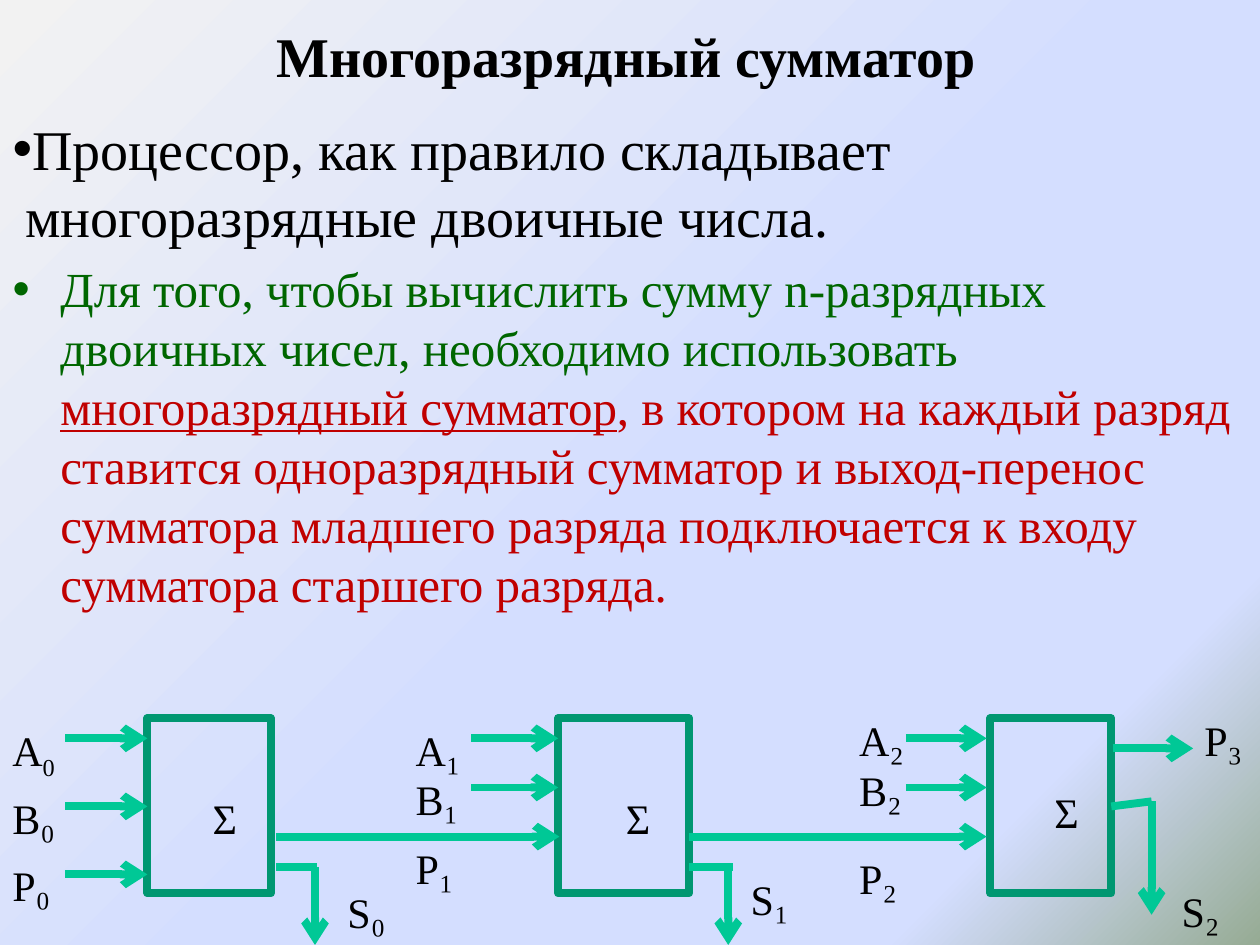
from lxml.etree import SubElement
from pptx import Presentation
from pptx.dml.color import RGBColor
from pptx.enum.shapes import MSO_CONNECTOR, MSO_SHAPE
from pptx.enum.text import MSO_ANCHOR, MSO_AUTO_SIZE, PP_ALIGN
from pptx.oxml.ns import qn
from pptx.util import Inches, Pt

FONT = "Times New Roman"
BLACK, GREEN, RED = "000000", "006600", "C00000"
BOX_LINE, WIRE = "009771", "00C896"
LINE_WIDTH = Pt(4.5)

# Rows shared by the three adders, in inches
BOX_TOP, BOX_HEIGHT = 5.7, 1.39
ROW_A, ROW_B, ROW_CARRY, ROW_SUM = 5.86, 6.25, 6.64, 6.88


def rgb(color):
    return RGBColor.from_string(color)


def set_font(font, size, color=BLACK, bold=False):
    font.name, font.size, font.bold = FONT, Pt(size), bold
    font.color.rgb = rgb(color)


def place(shape, left, top, width, height):
    shape.left, shape.top = Inches(left), Inches(top)
    shape.width, shape.height = Inches(width), Inches(height)


def set_background(slide, stops, angle):
    fill = slide.background.fill
    fill.gradient()
    fill.gradient_angle = 360 - angle  # counted counter-clockwise
    stop_list = slide.background._cSld.find(".//" + qn("a:gsLst"))
    for stop in list(stop_list):
        stop_list.remove(stop)
    for percent, color in stops:
        stop = SubElement(stop_list, qn("a:gs"), pos=str(percent * 1000))
        SubElement(stop, qn("a:srgbClr"), val=color)


def add_title(slide, text):
    title = slide.shapes.title
    place(title, 0.47, 0, 9, 0.87)
    frame = title.text_frame
    frame.auto_size = MSO_AUTO_SIZE.NONE
    frame.vertical_anchor = MSO_ANCHOR.MIDDLE
    frame.text = text
    frame.paragraphs[0].alignment = PP_ALIGN.CENTER
    set_font(frame.paragraphs[0].font, 32, bold=True)


def add_bullet(paragraph, size, indent, runs):
    properties = paragraph._p.get_or_add_pPr()
    properties.set("marL", str(Inches(indent)))
    properties.set("indent", str(-Inches(indent)))
    paragraph.space_before = Pt(size * 0.2)
    for text, color, underline in runs:
        run = paragraph.add_run()
        run.text = text
        set_font(run.font, size, color)
        run.font.underline = underline


def add_body(slide):
    body = slide.placeholders[1]
    place(body, 0, 0.86, 10, 4.14)
    frame = body.text_frame
    frame.auto_size = MSO_AUTO_SIZE.NONE
    add_bullet(frame.paragraphs[0], 32, 0.1, [
        ("Процессор, как правило складывает многоразрядные двоичные числа.", BLACK, False),
    ])
    add_bullet(frame.add_paragraph(), 28, 0.38, [
        ("Для того, чтобы вычислить сумму n-разрядных двоичных чисел, "
         "необходимо использовать ", GREEN, False),
        ("многоразрядный сумматор", RED, True),
        (", в котором на каждый разряд ставится одноразрядный сумматор и "
         "выход-перенос сумматора младшего разряда подключается к входу "
         "сумматора старшего разряда.", RED, False),
    ])


def add_wire(slide, start, end, arrow=True):
    wire = slide.shapes.add_connector(
        MSO_CONNECTOR.STRAIGHT, *(Inches(value) for value in (*start, *end)))
    wire.line.color.rgb = rgb(WIRE)
    wire.line.width = LINE_WIDTH
    if arrow:
        SubElement(wire.line._get_or_add_ln(), qn("a:tailEnd"), type="arrow")
    SubElement(wire._element.spPr, qn("a:effectLst"))


def add_label(slide, text, left, top, width=0.7, subscript=""):
    label = slide.shapes.add_textbox(
        Inches(left), Inches(top), Inches(width), Inches(0.5))
    label.text_frame.word_wrap = True
    paragraph = label.text_frame.paragraphs[0]
    set_font(paragraph.font, 24)
    paragraph.add_run().text = text
    if subscript:
        index = paragraph.add_run()
        index.text = subscript
        index.font._element.set("baseline", "-25000")


def add_adder(slide, left, width, sigma_left, sigma_top):
    adder = slide.shapes.add_shape(
        MSO_SHAPE.RECTANGLE, Inches(left), Inches(BOX_TOP), Inches(width), Inches(BOX_HEIGHT))
    adder.shadow.inherit = False
    adder.fill.background()
    adder.line.color.rgb = rgb(BOX_LINE)
    adder.line.width = LINE_WIDTH
    add_label(slide, "Σ", sigma_left, sigma_top, 0.4)


def add_inputs(slide, start, end, rows):
    for row in rows:
        add_wire(slide, (start, row), (end, row))


def add_sum_output(slide, start, corner, bottom, overhang=0.0):
    """Sideways stub, then an arrow down from its corner."""
    add_wire(slide, start, (corner[0] + overhang, corner[1]), arrow=False)
    add_wire(slide, corner, (corner[0], bottom))


def main():
    prs = Presentation()
    prs.slide_width, prs.slide_height = Inches(10), Inches(7.5)
    slide = prs.slides.add_slide(prs.slide_layouts[1])
    set_background(slide, [(0, "F2F2F2"), (53, "D4DEFF"), (83, "D4DEFF"), (100, "96AB94")], 45)
    add_title(slide, "Многоразрядный сумматор")
    add_body(slide)

    # Adders: left, width, sigma position
    for adder in [(1.17, 0.98, 1.59, 6.24), (4.43, 1.04, 4.87, 6.24), (7.86, 0.96, 8.27, 6.19)]:
        add_adder(slide, *adder)

    # Inputs of each digit
    add_inputs(slide, 0.52, 1.17, [ROW_A + 0.54 * i for i in range(3)])
    add_inputs(slide, 3.74, 4.43, [ROW_A, ROW_B])
    add_inputs(slide, 7.19, 7.83, [ROW_A, ROW_B])

    # Carries between digits and out of the last one
    add_wire(slide, (2.19, ROW_CARRY), (4.44, ROW_CARRY))
    add_wire(slide, (5.47, ROW_CARRY), (7.83, ROW_CARRY))
    add_wire(slide, (8.83, 5.94), (9.47, 5.94))

    # Sums
    add_sum_output(slide, (2.19, ROW_SUM), (2.5, ROW_SUM), 7.5, 0.02)
    add_sum_output(slide, (5.47, ROW_SUM), (5.78, ROW_SUM), 7.5, 0.04)
    add_sum_output(slide, (8.82, 6.4), (9.14, 6.36), 7.26)

    # Signal names, one column per digit
    add_label(slide, "A", 0, 5.7, subscript="0")
    columns = [
        (0, [("B₀", 6.24), ("P₀", 6.77)]),
        (3.2, [("A₁", 5.7), ("B₁", 6.09), ("P₁", 6.64)]),
        (6.72, [("A₂", 5.62), ("B₂", 6.02), ("P₂", 6.72)]),
    ]
    for left, names in columns:
        for name, top in names:
            add_label(slide, name, left, top)
    for name, left, top in [("S₀", 2.66, 6.99), ("S₁", 5.86, 6.88),
                            ("S₂", 9.28, 6.98), ("Р₃", 9.46, 5.62)]:
        add_label(slide, name, left, top)

    prs.save("out.pptx")


if __name__ == "__main__":
    main()
